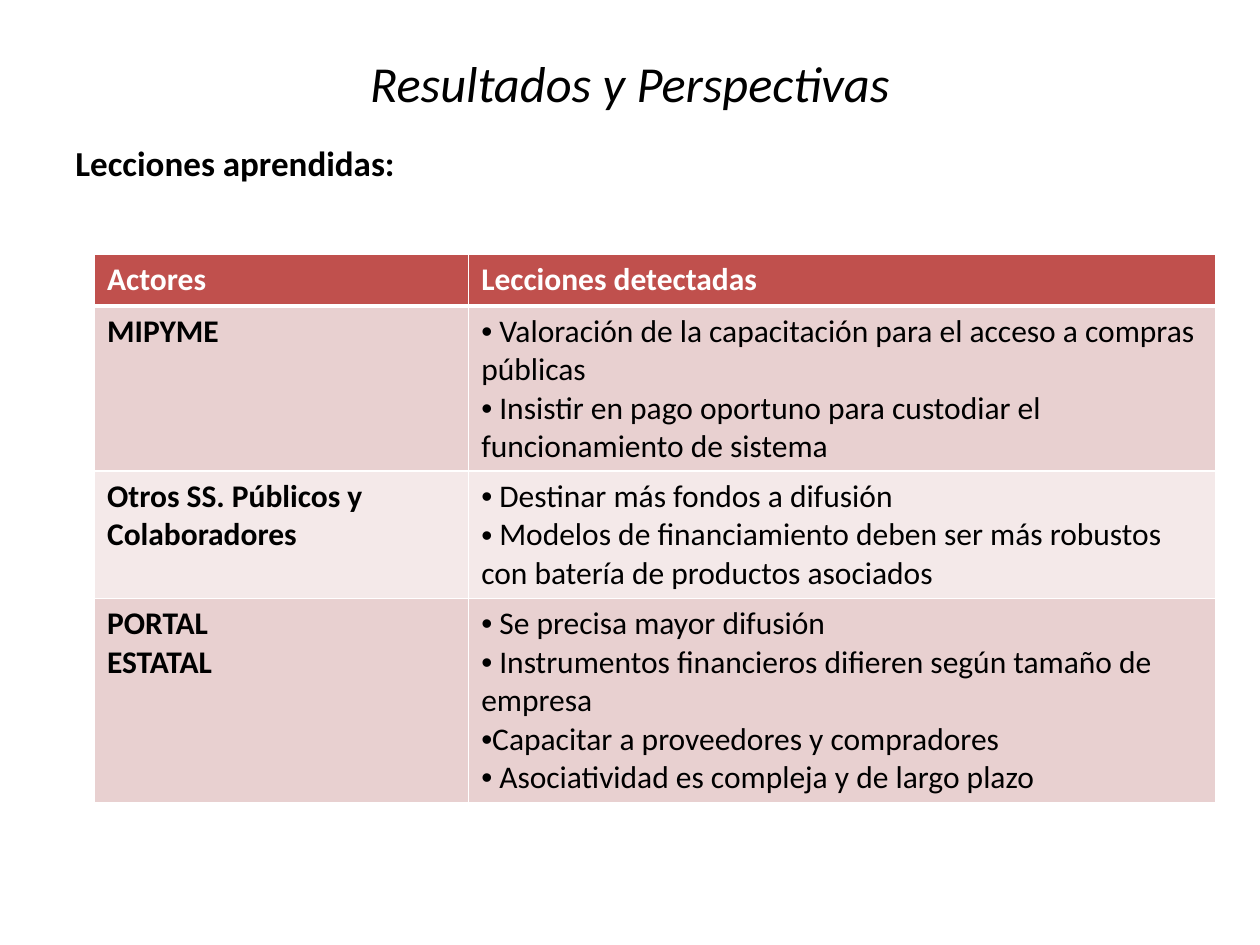
from dataclasses import dataclass

from lxml.etree import SubElement
from pptx import Presentation
from pptx.dml.color import RGBColor
from pptx.enum.text import MSO_ANCHOR as Anchor, PP_ALIGN as Align
from pptx.oxml.ns import qn
from pptx.util import Inches, Pt

COLORS = {
    "text": "000000",
    "white": "FFFFFF",
    "header": "C0504D",
    "band_dark": "E8D0D0",
    "band_light": "F4E9E9",
}
FONT = "Calibri"
COLUMN_WIDTHS = (2.97, 5.93)
BORDER_WIDTH = 1
HEADER_RULE_WIDTH = 3


@dataclass
class TextStyle:
    size: float
    bold: bool = False
    italic: bool = False
    color: str = "text"
    align: Align = Align.LEFT


@dataclass
class LessonRow:
    actor: str
    lessons: str
    height: float
    fill: str
    is_header: bool = False


ROWS = [
    LessonRow("Actores", "Lecciones detectadas", 0.41, "header", True),
    LessonRow(
        "MIPYME",
        " Valoración de la capacitación para el acceso a compras públicas\n"
        " Insistir en pago oportuno para custodiar el funcionamiento de sistema",
        1.31,
        "band_dark",
    ),
    LessonRow(
        "Otros SS. Públicos y Colaboradores",
        " Destinar más fondos a difusión\n"
        " Modelos de financiamiento deben ser más robustos con batería de productos asociados",
        1.01,
        "band_light",
    ),
    LessonRow(
        "PORTAL\nESTATAL",
        " Se precisa mayor difusión\n"
        " Instrumentos financieros difieren según tamaño de empresa\n"
        "Capacitar a proveedores y compradores\n"
        " Asociatividad es compleja y de largo plazo",
        1.62,
        "band_dark",
    ),
]


def rgb(name: str) -> RGBColor:
    return RGBColor.from_string(COLORS[name])


def write_text(frame, text: str, style: TextStyle) -> None:
    frame.text = text
    for para in frame.paragraphs:
        para.alignment = style.align
        for span in para.runs:
            span.font.name = FONT
            span.font.size = Pt(style.size)
            span.font.bold = style.bold
            span.font.italic = style.italic
            span.font.color.rgb = rgb(style.color)


def add_text(page, left: float, top: float, width: float, height: float,
             text: str, style: TextStyle):
    box = page.shapes.add_textbox(
        Inches(left), Inches(top), Inches(width), Inches(height))
    frame = box.text_frame
    frame.word_wrap = True
    write_text(frame, text, style)
    return frame


def add_bullets(frame) -> None:
    for para in frame.paragraphs:
        properties = para._p.get_or_add_pPr()
        properties.set("marL", "0")
        properties.set("indent", "0")
        SubElement(properties, qn("a:buFont"), typeface="Arial")
        SubElement(properties, qn("a:buChar"), char="•")


def set_borders(cell, top: float, bottom: float) -> None:
    properties = cell._tc.get_or_add_tcPr()
    widths = {"lnL": BORDER_WIDTH, "lnR": BORDER_WIDTH, "lnT": top, "lnB": bottom}
    for tag, width in widths.items():
        line = SubElement(properties, qn(f"a:{tag}"), w=str(Pt(width)))
        fill = SubElement(line, qn("a:solidFill"))
        SubElement(fill, qn("a:srgbClr"), val=COLORS["white"])


def add_lessons_table(page, left: float, top: float, rows: list[LessonRow]) -> None:
    height = sum(row.height for row in rows)
    table = page.shapes.add_table(
        len(rows), len(COLUMN_WIDTHS), Inches(left), Inches(top),
        Inches(sum(COLUMN_WIDTHS)), Inches(height)).table
    for column, width in zip(table.columns, COLUMN_WIDTHS):
        column.width = Inches(width)
    for index, row in enumerate(rows):
        table.rows[index].height = Inches(row.height)
        top_rule = HEADER_RULE_WIDTH if index == 1 else BORDER_WIDTH
        bottom_rule = HEADER_RULE_WIDTH if row.is_header else BORDER_WIDTH
        color = "white" if row.is_header else "text"
        for column_index, text in enumerate((row.actor, row.lessons)):
            cell = table.cell(index, column_index)
            is_lesson = column_index == 1 and not row.is_header
            write_text(cell.text_frame, text,
                       TextStyle(18, bold=not is_lesson, color=color))
            if is_lesson:
                add_bullets(cell.text_frame)
            set_borders(cell, top_rule, bottom_rule)
            cell.fill.solid()
            cell.fill.fore_color.rgb = rgb(row.fill)


def main() -> None:
    deck = Presentation()
    deck.slide_width, deck.slide_height = Inches(10), Inches(7.5)
    page = deck.slides.add_slide(deck.slide_layouts[6])

    title = add_text(page, 0.5, 0.3, 9, 0.93, "Resultados y Perspectivas",
                     TextStyle(28.8, italic=True, align=Align.CENTER))
    title.vertical_anchor = Anchor.MIDDLE
    title.margin_bottom = Inches(0.27)

    subtitle = add_text(page, 0.5, 1.07, 9, 5.63, "Lecciones aprendidas:",
                        TextStyle(20, bold=True))
    subtitle.paragraphs[0].space_before = Pt(4)

    add_lessons_table(page, 0.75, 2.02, ROWS)
    deck.save("out.pptx")


if __name__ == "__main__":
    main()
